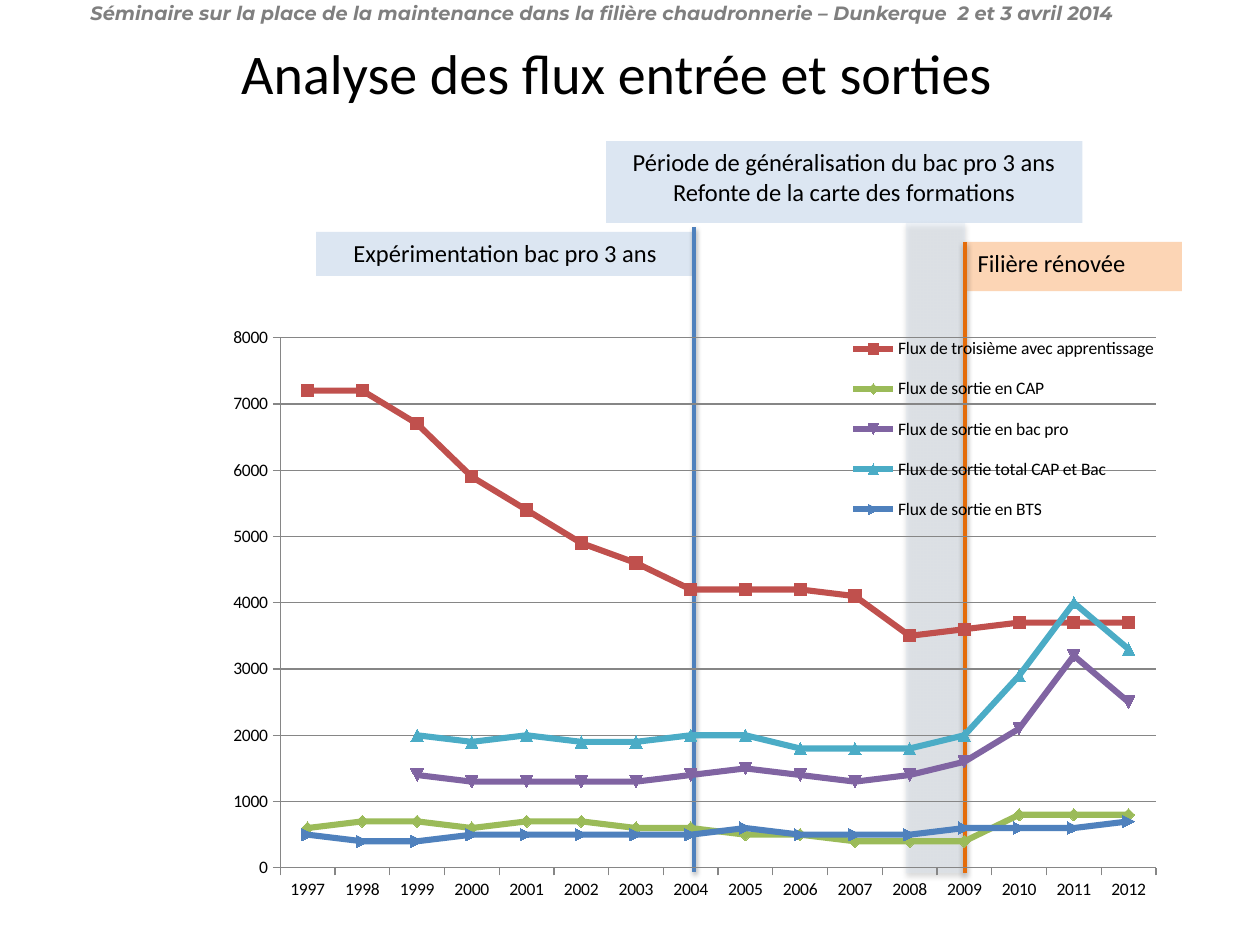
from lxml.etree import SubElement
from pptx import Presentation
from pptx.chart.data import CategoryChartData
from pptx.dml.color import RGBColor
from pptx.enum.chart import XL_CHART_TYPE as ChartType, XL_LEGEND_POSITION as LegendPosition
from pptx.enum.chart import XL_TICK_MARK as TickMark
from pptx.enum.shapes import MSO_CONNECTOR as Connector, MSO_SHAPE as Shape
from pptx.enum.text import MSO_ANCHOR as Anchor, MSO_AUTO_SIZE as AutoSize, PP_ALIGN as Align
from pptx.oxml.ns import qn
from pptx.util import Inches, Pt

BLACK = RGBColor(0x00, 0x00, 0x00)
GREY = RGBColor(0x7F, 0x7F, 0x7F)
GRID_GREY = RGBColor(0x86, 0x86, 0x86)
PALE_BLUE = RGBColor(0xDC, 0xE6, 0xF2)
PALE_ORANGE = RGBColor(0xFC, 0xD5, 0xB5)
RED = RGBColor(0xC0, 0x50, 0x4D)
GREEN = RGBColor(0x9B, 0xBB, 0x59)
PURPLE = RGBColor(0x80, 0x64, 0xA2)
TEAL = RGBColor(0x4B, 0xAC, 0xC6)
BLUE = RGBColor(0x4F, 0x81, 0xBD)
ORANGE = RGBColor(0xE4, 0x6C, 0x0A)

YEARS = range(1997, 2013)
FLOWS = [
    ("Flux de troisième avec apprentissage", RED,
     [7200, 7200, 6700, 5900, 5400, 4900, 4600, 4200,
      4200, 4200, 4100, 3500, 3600, 3700, 3700, 3700]),
    ("Flux de sortie en CAP", GREEN,
     [600, 700, 700, 600, 700, 700, 600, 600, 500, 500, 400, 400, 400, 800, 800, 800]),
    ("Flux de sortie en bac pro", PURPLE,
     [None, None, 1400, 1300, 1300, 1300, 1300, 1400,
      1500, 1400, 1300, 1400, 1600, 2100, 3200, 2500]),
    ("Flux de sortie total CAP et Bac", TEAL,
     [None, None, 2000, 1900, 2000, 1900, 1900, 2000,
      2000, 1800, 1800, 1800, 2000, 2900, 4000, 3300]),
    ("Flux de sortie en BTS", BLUE,
     [500, 400, 400, 500, 500, 500, 500, 500, 600, 500, 500, 500, 600, 600, 600, 700]),
]


def write_text(frame, text, size=14, color=BLACK, font="Calibri", align=Align.LEFT,
               anchor=Anchor.TOP, bold=False, italic=False):
    frame.vertical_anchor = anchor
    for index, line in enumerate(text.split("\n")):
        para = frame.add_paragraph() if index else frame.paragraphs[0]
        para.alignment = align
        span = para.add_run()
        span.text = line
        span.font.name, span.font.size = font, Pt(size)
        span.font.bold, span.font.italic = bold, italic
        span.font.color.rgb = color


def add_shadow(shape, alpha, distance):
    """Cast a black shadow straight down; alpha in percent, distance in points."""
    effects = SubElement(shape._element.spPr, qn("a:effectLst"))
    outer = SubElement(effects, qn("a:outerShdw"), blurRad=str(Pt(3.1)),
                       dist=str(Pt(distance)), dir="5400000", rotWithShape="0")
    black = SubElement(outer, qn("a:srgbClr"), val="000000")
    SubElement(black, qn("a:alpha"), val=str(alpha * 1000))


def add_block(shapes, left, top, width, height, fill):
    block = shapes.add_shape(Shape.RECTANGLE, Inches(left), Inches(top),
                             Inches(width), Inches(height))
    block.fill.solid()
    block.fill.fore_color.rgb = fill
    block.line.fill.background()
    return block


def add_label(shapes, left, top, width, height, fill, text, align=Align.CENTER):
    label = add_block(shapes, left, top, width, height, fill)
    label.shadow.inherit = False
    write_text(label.text_frame, text, align=align)


def add_marker_line(shapes, x, top, bottom, color):
    line = shapes.add_connector(Connector.STRAIGHT, Inches(x), Inches(bottom),
                                Inches(x), Inches(top))
    line.line.color.rgb = color
    line.line.width = Pt(2)
    add_shadow(line, 38, 1.6)


def add_header(page, left, top, width, height):
    box = page.shapes.add_textbox(Inches(left), Inches(top), Inches(width), Inches(height))
    box.text_frame.word_wrap = False
    box.text_frame.auto_size = AutoSize.SHAPE_TO_FIT_TEXT
    write_text(box.text_frame,
               "Séminaire sur la place de la maintenance dans la filière chaudronnerie"
               " – Dunkerque  2 et 3 avril 2014",
               size=11, color=GREY, font="Montserrat", bold=True, italic=True)


def place_title(page, left, top, width, height):
    title = page.shapes.title
    title.left, title.top = Inches(left), Inches(top)
    title.width, title.height = Inches(width), Inches(height)
    write_text(title.text_frame, "Analyse des flux entrée et sorties", size=32,
               align=Align.CENTER, anchor=Anchor.MIDDLE)


def add_generalisation(page, left, top, width, height):
    """Label above a translucent band that covers the years 2008 to 2009."""
    shapes = page.shapes.add_group_shape().shapes
    label_height = 0.65
    add_label(shapes, left, top, width, label_height, PALE_BLUE,
              "Période de généralisation du bac pro 3 ans\nRefonte de la carte des formations")
    band = add_block(shapes, left + 2.38, top + label_height, 0.47,
                     height - label_height, PALE_BLUE)
    tint = band._element.spPr.find(qn("a:solidFill"))[0]
    SubElement(tint, qn("a:alpha"), val="40000")
    add_shadow(band, 35, 1.8)


def add_experiment(page, left, top, width, height):
    shapes = page.shapes.add_group_shape().shapes
    add_label(shapes, left, top + 0.04, width, 0.35, PALE_BLUE, "Expérimentation bac pro 3 ans")
    add_marker_line(shapes, left + width, top, top + height, BLUE)


def add_renewal(page, left, top, width, height):
    shapes = page.shapes.add_group_shape().shapes
    add_label(shapes, left, top, width, 0.39, PALE_ORANGE, "Filière rénovée", Align.LEFT)
    add_marker_line(shapes, left, top, top + height, ORANGE)


def set_layout(element, following, x, y, w, h, inner=False):
    """Fix the place of a chart part, in fractions of the chart."""
    for old in element.findall(qn("c:layout")):
        element.remove(old)
    layout = element.makeelement(qn("c:layout"))
    manual = SubElement(layout, qn("c:manualLayout"))
    if inner:
        SubElement(manual, qn("c:layoutTarget"), val="inner")
    for name in ("xMode", "yMode"):
        SubElement(manual, qn("c:" + name), val="edge")
    for name, value in (("x", x), ("y", y), ("w", w), ("h", h)):
        SubElement(manual, qn("c:" + name), val=str(value))
    element.find(qn(following)).addprevious(layout)


def add_flow_chart(page, left, top, width, height):
    data = CategoryChartData(number_format="0")
    data.categories = [str(year) for year in YEARS]
    for name, _, values in FLOWS:
        data.add_series(name, values)
    chart = page.shapes.add_chart(ChartType.LINE_MARKERS, Inches(left), Inches(top),
                                  Inches(width), Inches(height), data).chart
    chart.has_title = False
    chart.font.name, chart.font.size = "Calibri", Pt(10)
    chart.font.color.rgb = BLACK

    plot = chart.plots[0]
    plot.vary_by_categories = False
    for series, (_, color, _) in zip(plot.series, FLOWS):
        series.smooth = False
        series.format.line.color.rgb = color
        series.format.line.width = Pt(3.5)
        series.marker.size = 7
        series.marker.format.fill.solid()
        series.marker.format.fill.fore_color.rgb = color
        series.marker.format.line.color.rgb = color

    values = chart.value_axis
    values.minimum_scale, values.maximum_scale, values.major_unit = 0, 8000, 1000
    values.has_major_gridlines = True
    for axis in (chart.category_axis, values):
        axis.major_tick_mark = TickMark.OUTSIDE
    for part in (chart.category_axis, values, values.major_gridlines):
        part.format.line.color.rgb = GRID_GREY
        part.format.line.width = Pt(0.75)

    chart.has_legend = True
    chart.legend.position = LegendPosition.RIGHT
    chart.legend.include_in_layout = False
    set_layout(chart.legend._element, "c:overlay", 0.65, 0.03, 0.33, 0.35)
    area = chart._chartSpace.chart.plotArea
    set_layout(area, "c:lineChart", 0.08, 0.06, 0.89, 0.84, inner=True)


def main():
    deck = Presentation()
    deck.slide_width, deck.slide_height = Inches(10), Inches(7.5)
    page = deck.slides.add_slide(deck.slide_layouts[5])
    add_header(page, 0.62, -0.04, 8.73, 0.29)
    place_title(page, 1.7, 0.15, 6.39, 0.85)
    add_generalisation(page, 4.81, 1.12, 3.78, 5.81)
    add_experiment(page, 2.51, 1.8, 3, 5.12)
    add_renewal(page, 7.66, 1.92, 1.72, 5.01)
    add_flow_chart(page, 1.6, 2.38, 7.81, 5.01)
    deck.save("out.pptx")


if __name__ == "__main__":
    main()
